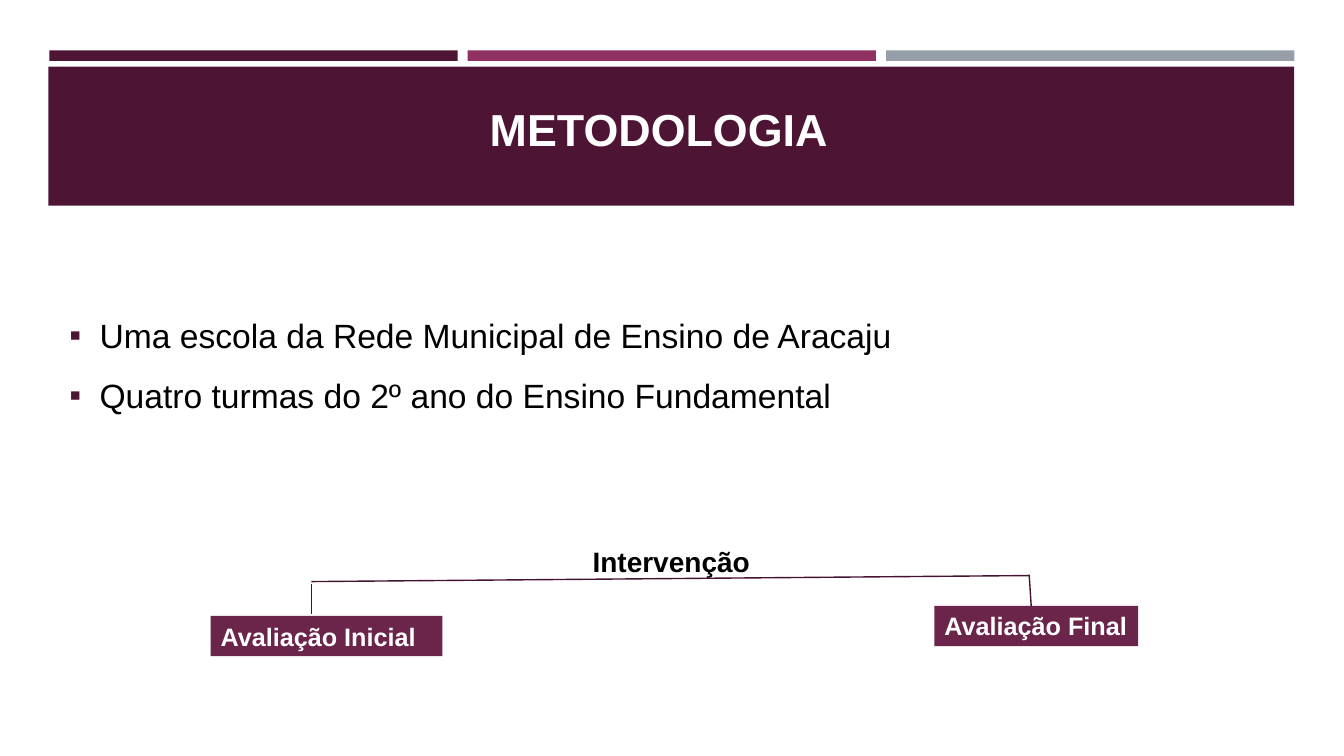
"""Builds the Metodologia slide on a grid of tenth-inch columns and rows."""
import pptx
import pptx.dml.color
import pptx.enum.shapes
import pptx.enum.text
import pptx.oxml.ns
import pptx.util
from lxml import etree

COLUMNS, ROWS = 133.33, 75
PLUM, MAGENTA, GREY = "4D1434", "903163", "969FA7"
LABEL_FILL, LINE_COLOUR = "6C254A", "45122F"
WHITE, BLACK = "FFFFFF", "000000"


def cells(*counts):
    """Turn counts of grid cells into lengths."""
    return [pptx.util.Inches(count / 10) for count in counts]


def colour(hex_text):
    """Turn a hex string into a colour."""
    return pptx.dml.color.RGBColor.from_string(hex_text)


def add_child(parent, tag, **attributes):
    """Append a drawing element to an XML parent."""
    child = etree.SubElement(parent, pptx.oxml.ns.qn(tag))
    for name, value in attributes.items():
        child.set(name, value)
    return child


def add_bar(page, place, fill):
    """Add a plain filled rectangle."""
    bar = page.shapes.add_shape(
        pptx.enum.shapes.MSO_SHAPE.RECTANGLE, *cells(*place))
    bar.shadow.inherit = False
    bar.fill.solid()
    bar.fill.fore_color.rgb = colour(fill)
    bar.line.fill.background()
    return bar


def write_lines(box, lines, size, ink, bold=True, wrap=True):
    """Write one left-aligned paragraph per line and return them."""
    frame = box.text_frame
    frame.word_wrap = wrap
    frame.vertical_anchor = pptx.enum.text.MSO_ANCHOR.MIDDLE
    paras = []
    for index, line in enumerate(lines):
        para = frame.add_paragraph() if index else frame.paragraphs[0]
        para.alignment = pptx.enum.text.PP_ALIGN.LEFT
        span = para.add_run()
        span.text = line
        span.font.name = "Arial"
        span.font.size = pptx.util.Pt(size)
        span.font.bold = bold
        span.font.color.rgb = colour(ink)
        paras.append(para)
    return paras


def add_text(page, place, lines, size, ink, **style):
    """Add a text box and return its paragraphs."""
    box = page.shapes.add_textbox(*cells(*place))
    return write_lines(box, lines, size, ink, **style)


def add_bullet(para, indent):
    """Give a paragraph a square bullet and wide line spacing."""
    para.line_spacing = 1.5
    properties = para._p.get_or_add_pPr()
    margin, = cells(indent)
    properties.set("marL", str(margin))
    properties.set("indent", str(-margin))
    add_child(add_child(properties, "a:buClr"), "a:srgbClr", val=PLUM)
    add_child(properties, "a:buFont", typeface="Arial")
    add_child(properties, "a:buChar", char="▪")


def add_line(page, start, end):
    """Add a thin straight line between two grid points."""
    line = page.shapes.add_connector(
        pptx.enum.shapes.MSO_CONNECTOR.STRAIGHT, *cells(*start, *end))
    line.line.color.rgb = colour(LINE_COLOUR)
    line.line.width = pptx.util.Pt(1)
    add_child(line._element.spPr, "a:effectLst")


def add_label(page, place, caption, wrap):
    """Add a filled label with white bold text."""
    write_lines(add_bar(page, place, LABEL_FILL), [caption], 18, WHITE, wrap=wrap)


def add_header(page):
    """Add the three stripes, the band and the title."""
    for index, fill in enumerate((PLUM, MAGENTA, GREY)):
        add_bar(page, (4.9 + 41.5 * index, 5, 40.5, 1.05), fill)
    add_bar(page, (4.8, 6.6, 123.6, 13.8), PLUM)
    add_text(page, (47.6, 9.4, 38.2, 6.7), ["METODOLOGIA"], 32, WHITE)


def add_timeline(page):
    """Add the bracket that joins the two assessments."""
    add_line(page, (30.9, 57.7), (102.1, 57.1))
    add_line(page, (102.1, 57), (102.3, 60.1))
    add_line(page, (30.9, 57.9), (30.9, 60.9))
    add_label(page, (20.9, 61.1, 23, 4), "Avaliação Inicial", True)
    add_label(page, (92.7, 60.1, 20.2, 4), "Avaliação Final", False)
    add_text(page, (57.8, 53.5, 17.8, 4.4), ["Intervenção"], 20, BLACK, wrap=False)


def main():
    """Build and save the deck."""
    deck = pptx.Presentation()
    deck.slide_width, deck.slide_height = cells(COLUMNS, ROWS)
    page = deck.slides.add_slide(deck.slide_layouts[6])
    add_header(page)
    facts = ["Uma escola da Rede Municipal de Ensino de Aracaju",
             "Quatro turmas do 2º ano do Ensino Fundamental"]
    for para in add_text(page, (5.9, 29, 110, 12.4), facts, 24, BLACK, bold=False):
        add_bullet(para, 3)
    add_timeline(page)
    deck.save("out.pptx")


if __name__ == "__main__":
    main()
